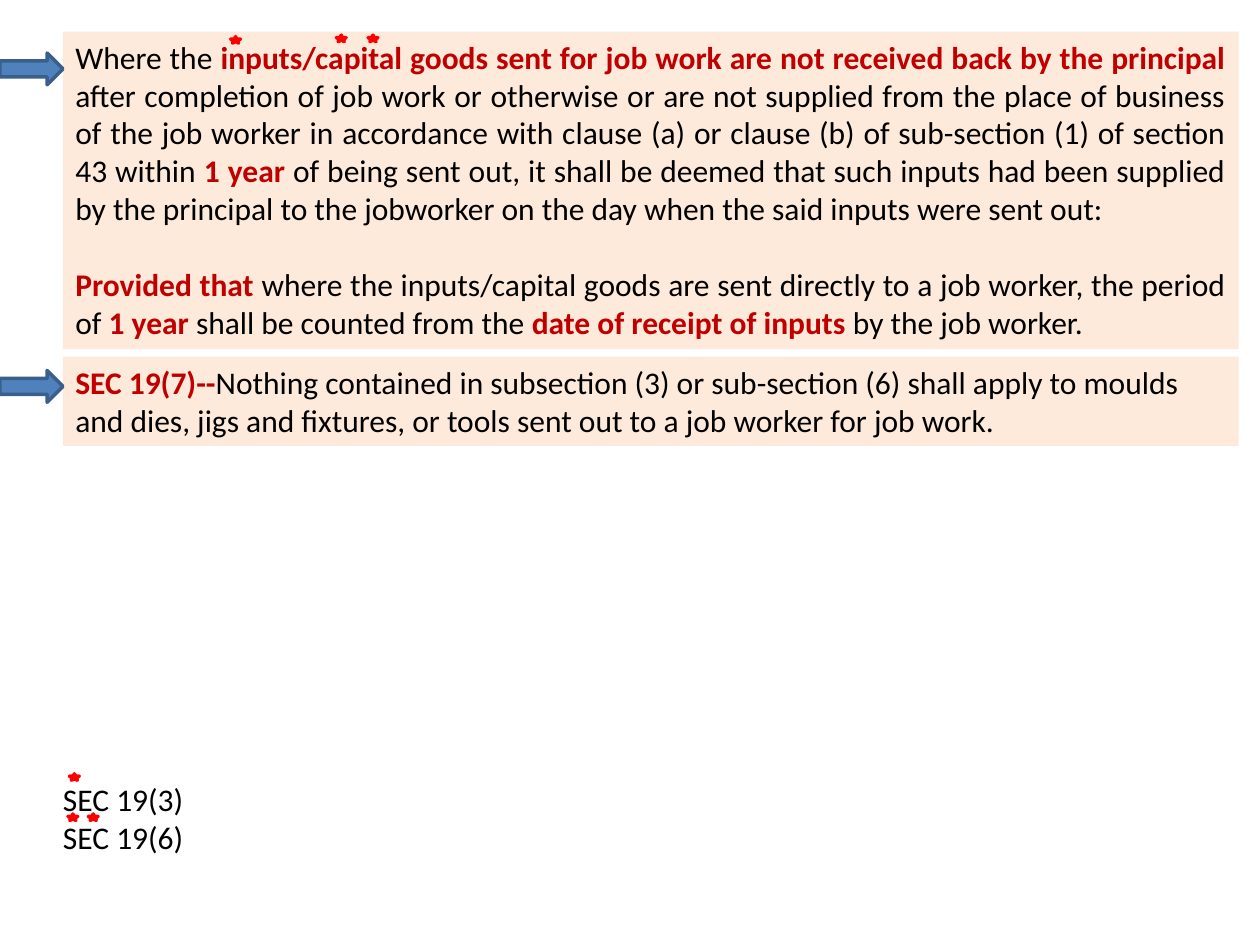
from pptx import Presentation
from pptx.dml.color import RGBColor
from pptx.enum.shapes import MSO_SHAPE
from pptx.enum.text import MSO_AUTO_SIZE, PP_ALIGN
from pptx.util import Cm, Pt

PEACH = RGBColor(0xFD, 0xEA, 0xDA)
BLUE = RGBColor(0x4F, 0x81, 0xBD)
NAVY = RGBColor(0x3A, 0x5F, 0x8C)
RED = RGBColor(0xFF, 0x00, 0x00)
CRIMSON = RGBColor(0xC0, 0x00, 0x00)
BLACK = RGBColor(0x00, 0x00, 0x00)

ARROW = MSO_SHAPE.RIGHT_ARROW
STAR = MSO_SHAPE.STAR_5_POINT
LEFT = PP_ALIGN.LEFT
JUSTIFY = PP_ALIGN.JUSTIFY
FIT = MSO_AUTO_SIZE.SHAPE_TO_FIT_TEXT

FONT = "Calibri"
SIZE = Pt(18)
WIDTH = 23.7
GAP = Pt(22)

RULE = [
    [
        ("Where the ", False),
        ("inputs/capital goods sent for job work are not received back "
         "by the principal ", True),
        ("after completion of job work or otherwise or are not supplied from "
         "the place of business of the job worker in accordance with clause "
         "(a) or clause (b) of sub-section (1) of section 43 within ", False),
        ("1 year", True),
        (" of being sent out, it shall be deemed that such inputs had been "
         "supplied by the principal to the jobworker on the day when the "
         "said inputs were sent out:", False),
    ],
    [
        ("Provided that ", True),
        ("where the inputs/capital goods are sent directly to a job worker, "
         "the period of ", False),
        ("1 year ", True),
        ("shall be counted from the ", False),
        ("date of receipt of inputs ", True),
        ("by the job worker.", False),
    ],
]
TOOLS = [[
    ("SEC 19(7)--", True),
    ("Nothing contained in subsection (3) or sub-section (6) shall apply to "
     "moulds and dies, jigs and fixtures, or tools sent out to a job worker "
     "for job work.", False),
]]
NOTES = [[("SEC 19(3)", False)], [("SEC 19(6)", False)]]

ARROWS = [1.07, 7.47]
STARS = [(4.65, 0.74), (6.78, 0.71), (7.42, 0.71),
         (1.4, 15.6), (1.78, 16.41), (1.37, 16.41)]


def add_text(slide, left, top, height, paras, fill=None, align=LEFT, gap=Pt(0)):
    box = slide.shapes.add_textbox(Cm(left), Cm(top), Cm(WIDTH), Cm(height))
    if fill is not None:
        box.fill.solid()
        box.fill.fore_color.rgb = fill
    frame = box.text_frame
    frame.word_wrap = True
    frame.auto_size = FIT
    for index, parts in enumerate(paras):
        para = frame.add_paragraph() if index else frame.paragraphs[0]
        para.alignment = align
        if index:
            para.space_before = gap
        for text, strong in parts:
            run = para.add_run()
            run.text = text
            run.font.name = FONT
            run.font.size = SIZE
            run.font.bold = strong
            run.font.color.rgb = CRIMSON if strong else BLACK


def add_mark(slide, kind, left, top, width, height, line):
    mark = slide.shapes.add_shape(kind, Cm(left), Cm(top), Cm(width), Cm(height))
    mark.shadow.inherit = False
    mark.fill.solid()
    mark.fill.fore_color.rgb = BLUE
    mark.line.color.rgb = line
    mark.line.width = Pt(2)


def main():
    deck = Presentation()
    deck.slide_width = Cm(25.4)
    deck.slide_height = Cm(19.05)
    slide = deck.slides.add_slide(deck.slide_layouts[6])
    add_text(slide, 1.27, 7.19, 1.8, TOOLS, PEACH)
    add_text(slide, 1.27, 0.64, 6.4, RULE, PEACH, JUSTIFY, GAP)
    for top in ARROWS:
        add_mark(slide, ARROW, 0, top, 1.27, 0.64, NAVY)
    for left, top in STARS:
        add_mark(slide, STAR, left, top, 0.2, 0.13, RED)
    add_text(slide, 1.02, 15.6, 1.8, NOTES)
    deck.save("out.pptx")


if __name__ == "__main__":
    main()
